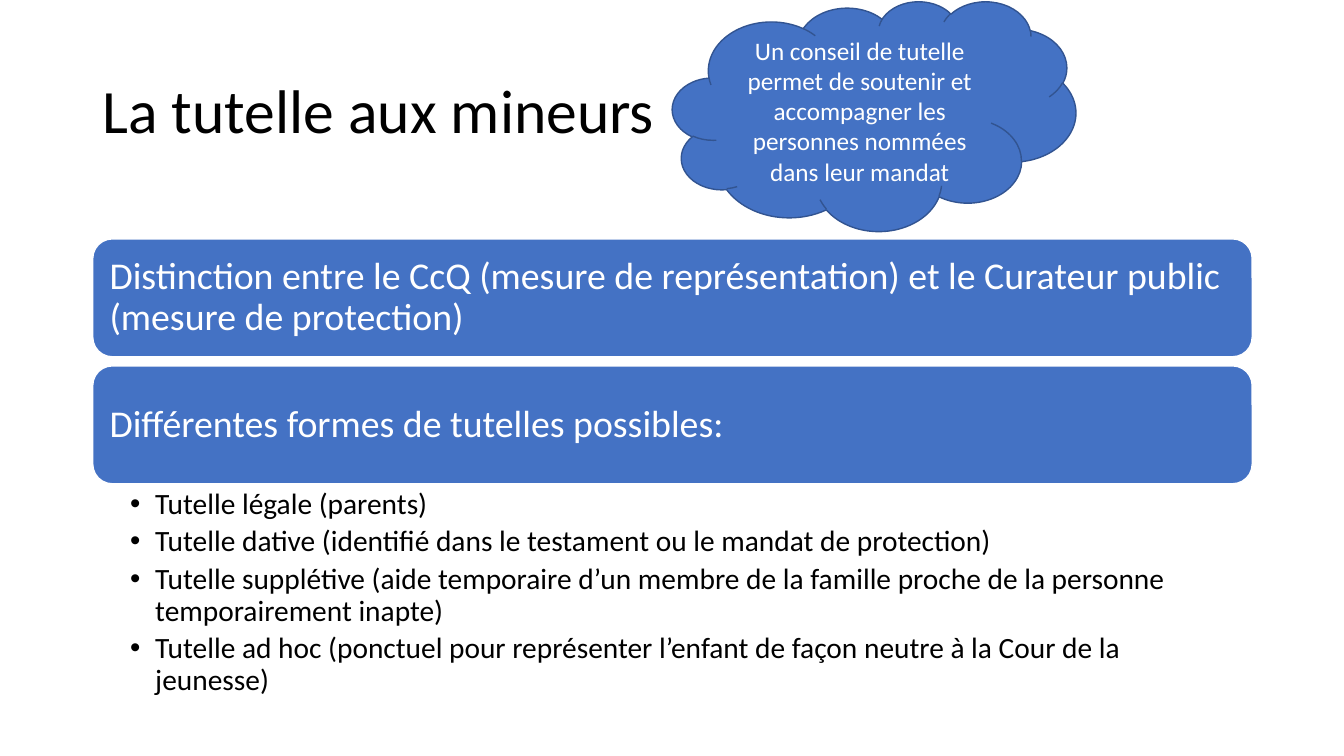
from pptx import Presentation, util as u
from pptx.dml.color import RGBColor
from pptx.enum import shapes, text
from pptx.oxml.ns import qn
from lxml import etree

hues = {"blue": "4472C4", "navy": "325491", "white": "FFFFFF", "black": "000000"}
left, width = 0.92, 11.5

deck = Presentation()
deck.slide_width, deck.slide_height = u.Inches(13.33), u.Inches(7.5)
slide = deck.slides.add_slide(deck.slide_layouts[6])


def write(shape, lines, size, hue="white", align="LEFT", anchor="MIDDLE",
          pad=(0.1, 0.05, 0.1, 0.05), space=0.9, after=0, bullet=False):
    frame = shape.text_frame
    frame.word_wrap = True
    frame.vertical_anchor = getattr(text.MSO_ANCHOR, anchor)
    frame.margin_left, frame.margin_top, frame.margin_right, frame.margin_bottom = map(u.Inches, pad)
    frame.text = "\n".join(lines)
    for par in frame.paragraphs:
        par.alignment = getattr(text.PP_ALIGN, align)
        par.line_spacing, par.space_after = space, u.Pt(after)
        font = par.runs[0].font
        font.name, font.size = "Calibri", u.Pt(size)
        font.color.rgb = RGBColor.from_string(hues[hue])
        if bullet:
            props = par._p.get_or_add_pPr()
            props.set("marL", str(u.Inches(0.25)))
            props.set("indent", str(-u.Inches(0.25)))
            etree.SubElement(props, qn("a:buFont"), typeface="Arial")
            etree.SubElement(props, qn("a:buChar"), char="•")


def draw(kind, box, edge):
    shape = slide.shapes.add_shape(kind, *map(u.Inches, box))
    shape.shadow.inherit = False
    shape.fill.solid()
    shape.fill.fore_color.rgb = RGBColor.from_string(hues["blue"])
    shape.line.color.rgb = RGBColor.from_string(hues[edge])
    shape.line.width = u.Pt(1)
    return shape


title = slide.shapes.add_textbox(*map(u.Inches, (left, 0.4, width, 1.45)))
write(title, ["La tutelle aux mineurs"], 44, "black")

cards = [
    "Distinction entre le CcQ (mesure de représentation) et le Curateur public (mesure de protection)",
    "Différentes formes de tutelles possibles:",
]
for row, label in enumerate(cards):
    card = draw(shapes.MSO_SHAPE.ROUNDED_RECTANGLE, (left, 2.37 + 1.26 * row, width, 1.17), "white")
    write(card, [label], 27, pad=(0.11,) * 4, after=9.5)

forms = [
    "Tutelle légale (parents)",
    "Tutelle dative (identifié dans le testament ou le mandat de protection)",
    "Tutelle supplétive (aide temporaire d’un membre de la famille proche de la personne temporairement inapte)",
    "Tutelle ad hoc (ponctuel pour représenter l’enfant de façon neutre à la Cour de la jeunesse)",
]
body = slide.shapes.add_textbox(*map(u.Inches, (left, 4.81, width, 2.26)))
write(body, forms, 21, "black", anchor="TOP", pad=(0.37, 0.04, 0.21, 0.04), after=4.2, bullet=True)

cloud = draw(shapes.MSO_SHAPE.CLOUD, (6.67, 0.01, 4, 2.28), "navy")
advice = "Un conseil de tutelle permet de soutenir et accompagner les personnes nommées dans leur mandat"
write(cloud, [advice], 18, align="CENTER", space=1.0)

deck.save("out.pptx")
